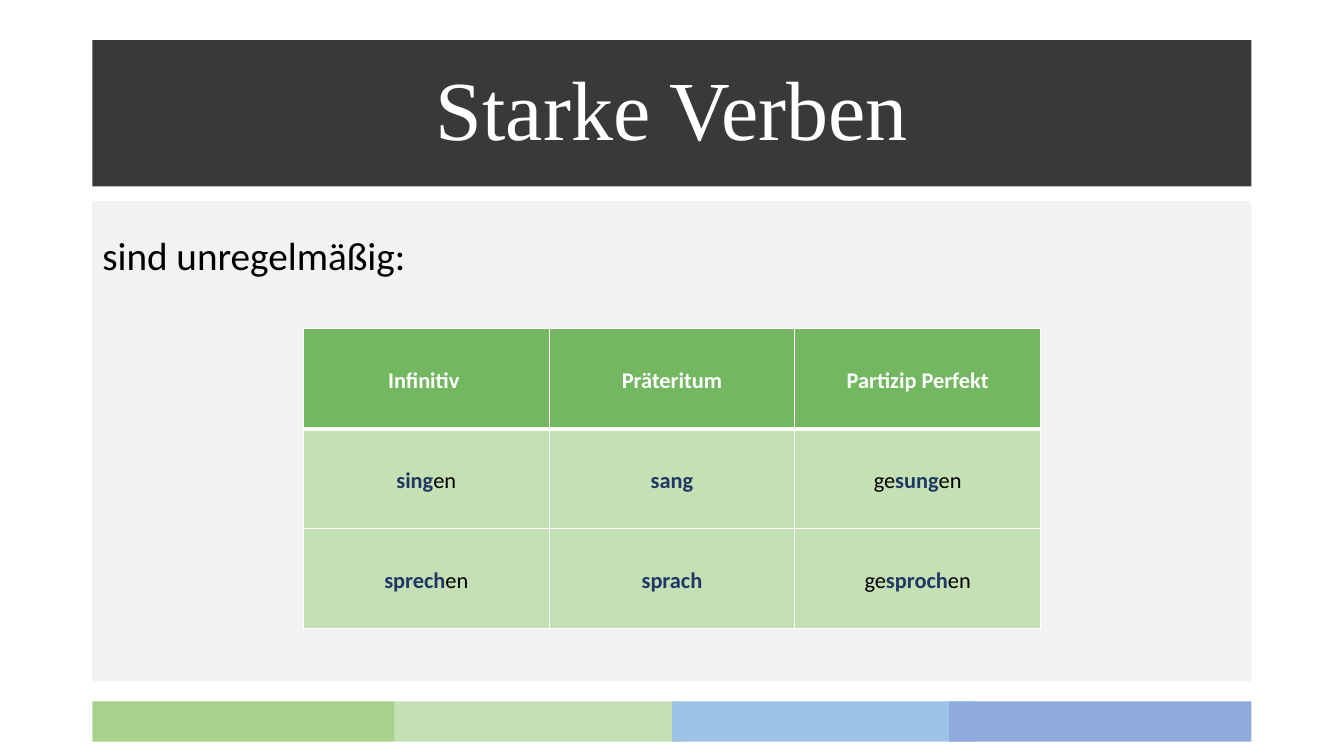
import pptx
import pptx.dml.color
import pptx.enum.shapes
import pptx.enum.text
import pptx.oxml
import pptx.oxml.ns
import pptx.util

Pt = pptx.util.Pt
RGBColor = pptx.dml.color.RGBColor
PP_ALIGN = pptx.enum.text.PP_ALIGN
MSO_ANCHOR = pptx.enum.text.MSO_ANCHOR

WHITE = RGBColor(0xFF, 0xFF, 0xFF)
BLACK = RGBColor(0x00, 0x00, 0x00)
CHARCOAL = RGBColor(0x3B, 0x38, 0x38)
PALE_GREY = RGBColor(0xF2, 0xF2, 0xF2)
HEADER_GREEN = RGBColor(0x73, 0xB7, 0x61)
MID_GREEN = RGBColor(0xA9, 0xD1, 0x8E)
LIGHT_GREEN = RGBColor(0xC5, 0xE0, 0xB4)
LIGHT_BLUE = RGBColor(0x9D, 0xC3, 0xE6)
MID_BLUE = RGBColor(0x8F, 0xAA, 0xDC)
STEM_BLUE = RGBColor(0x20, 0x38, 0x64)

# Verb stems stand between asterisks.
VERB_FORMS = [
    ["Infinitiv ", "Präteritum", "Partizip Perfekt"],
    ["*sing*en", "*sang*", "ge*sung*en"],
    ["*sprech*en", "*sprach*", "ge*sproch*en"],
]


def add_panel(slide, left, top, width, height, color):
    panel = slide.shapes.add_shape(
        pptx.enum.shapes.MSO_SHAPE.RECTANGLE,
        Pt(left), Pt(top), Pt(width), Pt(height))
    panel.shadow.inherit = False
    panel.fill.solid()
    panel.fill.fore_color.rgb = color
    panel.line.fill.background()
    return panel


def format_run(run, size, color, font="Calibri", bold=False):
    run.font.name = font
    run.font.size = Pt(size)
    run.font.bold = bold
    run.font.color.rgb = color


def add_color_strip(slide, left, top, width, height):
    """Four bars; the outer ones are wider, the second reaches under the third."""
    outer = 216
    step = (width - 2 * outer) / 2
    bars = [
        (outer, 204.5, LIGHT_GREEN),
        (outer + step, outer, LIGHT_BLUE),
        (0, outer, MID_GREEN),
        (width - outer, outer, MID_BLUE),
    ]
    for offset, bar_width, color in bars:
        add_panel(slide, left + offset, top, bar_width, height, color)


def add_title(slide, left, top, width, height):
    banner = add_panel(slide, left, top, width, height, CHARCOAL)
    banner.text_frame.text = "Starke Verben"
    banner.text_frame.vertical_anchor = MSO_ANCHOR.MIDDLE
    heading = banner.text_frame.paragraphs[0]
    heading.alignment = PP_ALIGN.CENTER
    heading.line_spacing = 0.9
    format_run(heading.runs[0], 60, WHITE, "Times New Roman")


def set_cell_border(cell, side, width):
    border = pptx.oxml.parse_xml(
        f'<a:ln{side} {pptx.oxml.ns.nsdecls("a")} w="{Pt(width)}">'
        f'<a:solidFill><a:srgbClr val="{WHITE}"/></a:solidFill></a:ln{side}>')
    cell._tc.get_or_add_tcPr().append(border)


def fill_verb_cell(cell, row, marked_text):
    is_header = row == 0
    cell.margin_left = cell.margin_right = Pt(5)
    cell.margin_top = cell.margin_bottom = 0
    cell.vertical_anchor = MSO_ANCHOR.MIDDLE
    border_widths = {"L": 1, "R": 1, "T": 3 if row == 1 else 1,
                     "B": 3 if is_header else 1}
    for side, width in border_widths.items():
        set_cell_border(cell, side, width)
    cell.fill.solid()
    cell.fill.fore_color.rgb = HEADER_GREEN if is_header else LIGHT_GREEN

    verb_form = cell.text_frame.paragraphs[0]
    verb_form.alignment = PP_ALIGN.CENTER
    verb_form.line_spacing = 1.15
    for index, part in enumerate(marked_text.split("*")):
        if not part:
            continue
        is_stem = index % 2 == 1
        run = verb_form.add_run()
        run.text = part
        color = WHITE if is_header else STEM_BLUE if is_stem else BLACK
        format_run(run, 16, color, bold=is_header or is_stem)


def add_verb_table(slide, left, top, width, height):
    row_count, column_count = len(VERB_FORMS), len(VERB_FORMS[0])
    verb_table = slide.shapes.add_table(
        row_count, column_count, Pt(left), Pt(top), Pt(width), Pt(height)).table
    for column in verb_table.columns:
        column.width = Pt(width / column_count)
    for row, forms in enumerate(VERB_FORMS):
        verb_table.rows[row].height = Pt(height / row_count)
        for column, marked_text in enumerate(forms):
            fill_verb_cell(verb_table.cell(row, column), row, marked_text)


def add_content(slide, left, top, width, height):
    """Grey panel with the lead-in line and the centred verb table."""
    panel = add_panel(slide, left, top, width, height, PALE_GREY)
    panel.text_frame.text = "sind unregelmäßig:"
    panel.text_frame.vertical_anchor = MSO_ANCHOR.TOP
    panel.text_frame.margin_top = Pt(25)
    lead_in = panel.text_frame.paragraphs[0]
    lead_in.alignment = PP_ALIGN.LEFT
    lead_in.line_spacing = 0.9
    format_run(lead_in.runs[0], 28, BLACK)

    table_width = 526.5
    add_verb_table(slide, left + (width - table_width) / 2, top + 91,
                   table_width, 214.5)


def main():
    presentation = pptx.Presentation()
    presentation.slide_width = Pt(960)
    presentation.slide_height = Pt(540)
    slide = presentation.slides.add_slide(presentation.slide_layouts[6])

    margin, content_width = 66, 828
    add_color_strip(slide, margin, 501, content_width, 28.8)
    add_title(slide, margin, 28.75, content_width, 104.4)
    add_content(slide, margin, 143.75, content_width, 342.75)
    presentation.save("out.pptx")


if __name__ == "__main__":
    main()
